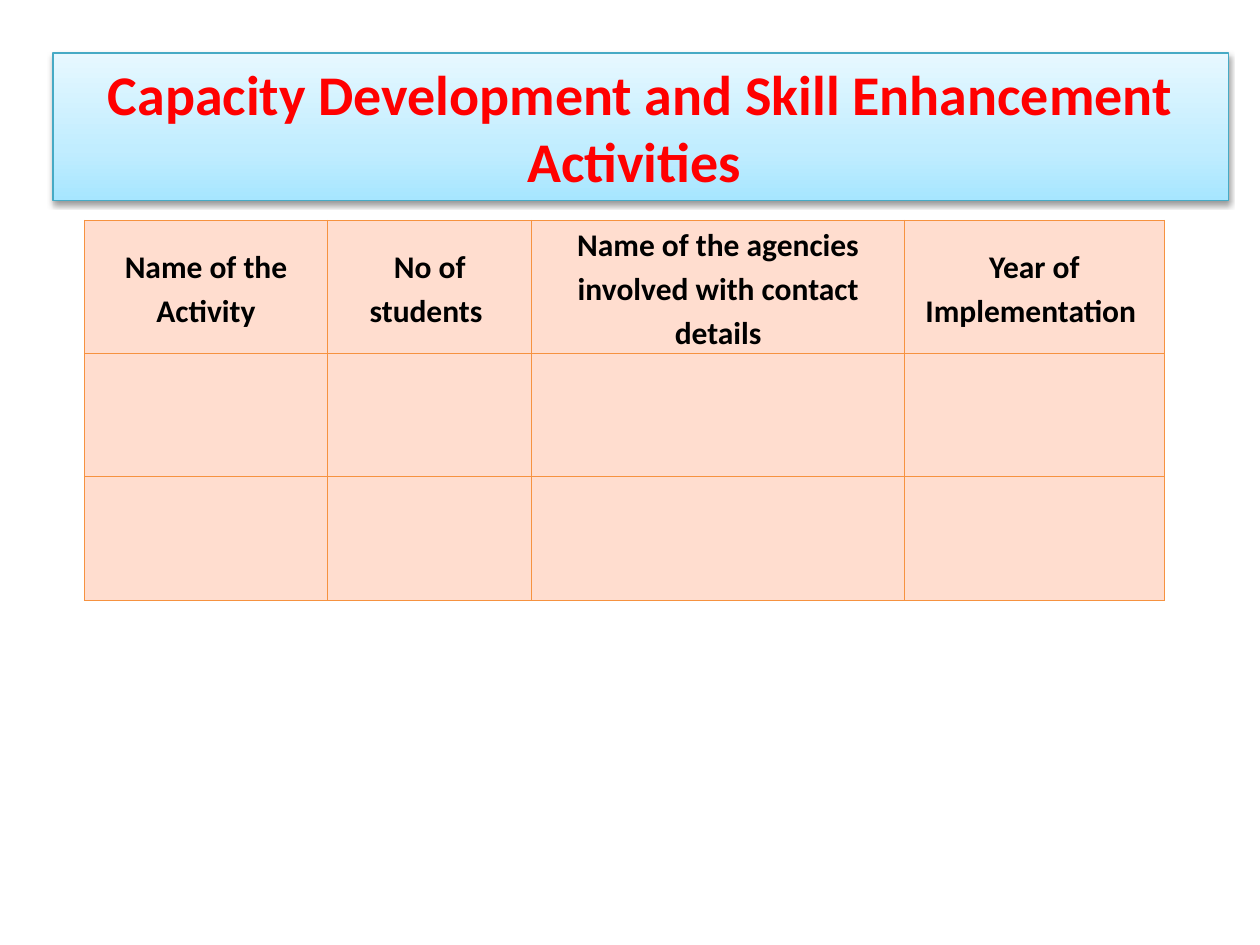
"""Build a slide with a title banner and a table of capacity development activities."""
from dataclasses import dataclass

from lxml import etree
from pptx import Presentation
from pptx import util as u
from pptx.dml.color import RGBColor
from pptx.enum import text
from pptx.oxml import parse_xml
from pptx.oxml.ns import nsdecls, qn


@dataclass(frozen=True)
class Theme:
    font: str = "Calibri"
    title_size: int = 32
    table_size: int = 18
    line_width: float = 0.75
    title_color: str = "FF0000"
    text_color: str = "000000"
    banner_line: str = "46AAC5"
    banner_stops: tuple = ((0, "A7E6FF"), (35, "C1EDFF"), (100, "E7F8FF"))
    cell_fill: str = "FFDDCF"
    cell_line: str = "F69240"


THEME = Theme()
HEADERS = (
    "Name of the Activity",
    "No of students ",
    "Name of the agencies involved with contact details",
    "Year of Implementation ",
)
COLUMN_WIDTHS = (1.93, 1.62, 2.96, 2.06)
ROW_HEIGHTS = (0.83, 0.98, 0.98)


def write_text(frame, content, *, size, color, spacing=1.0):
    frame.word_wrap = True
    paragraph = frame.paragraphs[0]
    paragraph.alignment = text.PP_ALIGN.CENTER
    paragraph.line_spacing = spacing
    run = paragraph.add_run()
    run.text = content
    run.font.name = THEME.font
    run.font.size = u.Pt(size)
    run.font.bold = True
    run.font.color.rgb = RGBColor.from_string(color)


def style_banner(shape):
    stops = "".join(
        f'<a:gs pos="{position * 1000}"><a:srgbClr val="{color}"/></a:gs>'
        for position, color in THEME.banner_stops
    )
    properties = shape._element.spPr
    properties.append(parse_xml(
        f'<a:prstGeom {nsdecls("a")} prst="roundRect"><a:avLst/></a:prstGeom>'))
    properties.append(parse_xml(
        f'<a:gradFill {nsdecls("a")} rotWithShape="1"><a:gsLst>{stops}</a:gsLst>'
        '<a:lin ang="16200000" scaled="1"/></a:gradFill>'))
    shape.line.color.rgb = RGBColor.from_string(THEME.banner_line)
    shape.line.width = u.Pt(THEME.line_width)
    properties.append(parse_xml(
        f'<a:effectLst {nsdecls("a")}><a:outerShdw blurRad="40000" dist="20000" '
        'dir="5400000" rotWithShape="0"><a:srgbClr val="000000">'
        '<a:alpha val="38000"/></a:srgbClr></a:outerShdw></a:effectLst>'))


def add_title(slide, content):
    title = slide.shapes.title
    title.left, title.top = u.Inches(0.42), u.Inches(0.42)
    title.width, title.height = u.Inches(9.33), u.Inches(1.17)
    style_banner(title)
    frame = title.text_frame
    frame.auto_size = text.MSO_AUTO_SIZE.NONE
    frame.vertical_anchor = text.MSO_ANCHOR.MIDDLE
    write_text(frame, content, size=THEME.title_size, color=THEME.title_color)


def style_cell(cell):
    properties = cell._tc.get_or_add_tcPr()
    for side in ("lnL", "lnR", "lnT", "lnB"):
        line = etree.SubElement(
            properties, qn(f"a:{side}"), w=str(u.Pt(THEME.line_width)))
        fill = etree.SubElement(line, qn("a:solidFill"))
        etree.SubElement(fill, qn("a:srgbClr"), val=THEME.cell_line)
    cell.fill.solid()
    cell.fill.fore_color.rgb = RGBColor.from_string(THEME.cell_fill)
    cell.vertical_anchor = text.MSO_ANCHOR.MIDDLE
    cell.margin_left = cell.margin_right = u.Inches(0.07)
    cell.margin_top = cell.margin_bottom = 0


def add_activity_table(slide):
    table = slide.shapes.add_table(
        len(ROW_HEIGHTS), len(COLUMN_WIDTHS), u.Inches(0.67), u.Inches(1.75),
        u.Inches(sum(COLUMN_WIDTHS)), u.Inches(sum(ROW_HEIGHTS))).table
    for column, width in zip(table.columns, COLUMN_WIDTHS):
        column.width = u.Inches(width)
    for row, height in zip(table.rows, ROW_HEIGHTS):
        row.height = u.Inches(height)
    for cell in table.iter_cells():
        style_cell(cell)
    for cell, header in zip(table.rows[0].cells, HEADERS):
        write_text(cell.text_frame, header, size=THEME.table_size,
                   color=THEME.text_color, spacing=1.15)


def main():
    presentation = Presentation()
    presentation.slide_width = u.Inches(10)
    presentation.slide_height = u.Inches(7.5)
    slide = presentation.slides.add_slide(
        presentation.slide_layouts.get_by_name("Title Only"))
    add_title(slide, "Capacity Development and Skill Enhancement Activities ")
    add_activity_table(slide)
    presentation.save("out.pptx")


if __name__ == "__main__":
    main()
